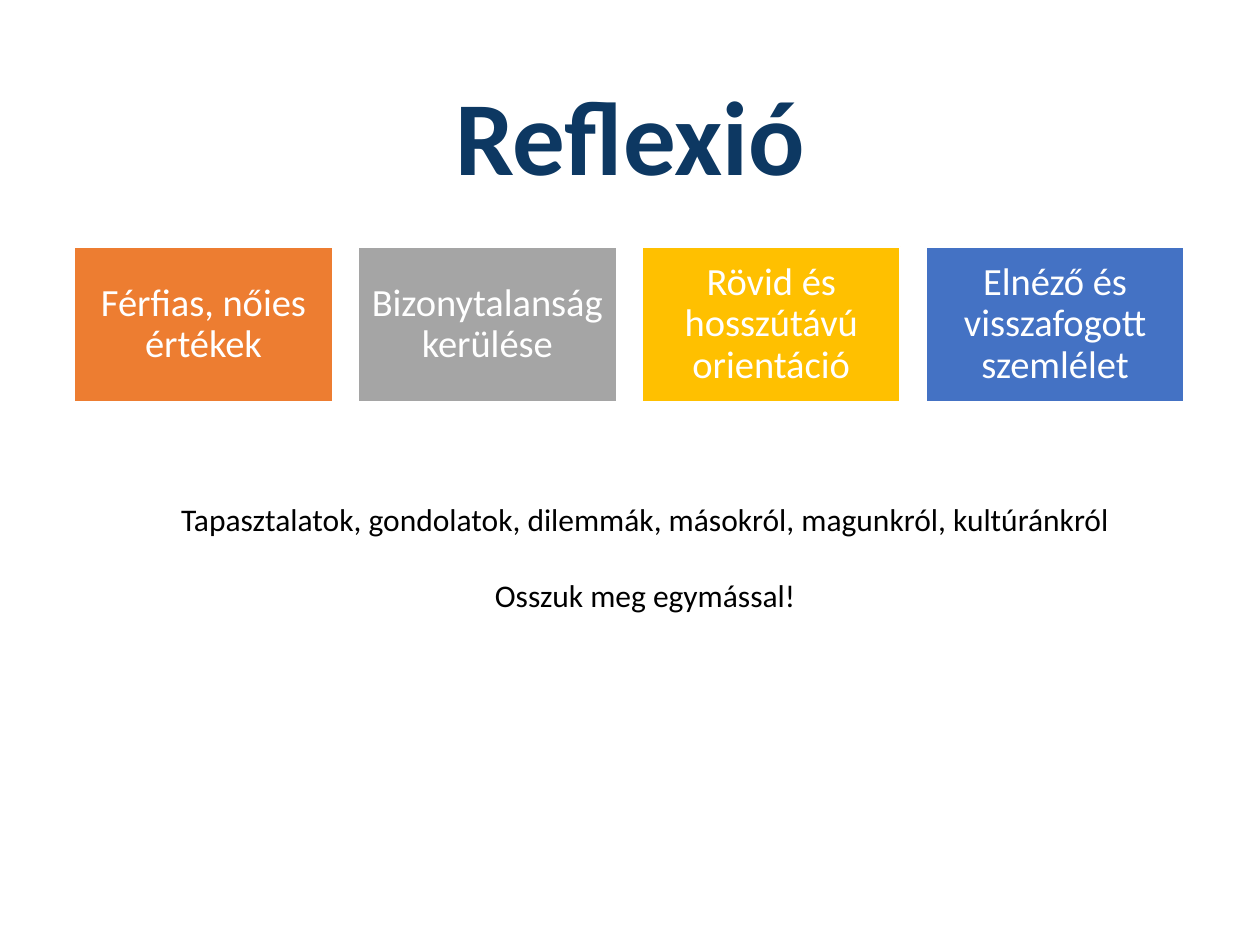
from dataclasses import dataclass

from pptx import Presentation
from pptx import util as u
from pptx.dml.color import RGBColor
from pptx.enum import shapes, text

FONT = "Calibri"
NAVY = RGBColor(0x0D, 0x38, 0x62)
ORANGE = RGBColor(0xED, 0x7D, 0x31)
GRAY = RGBColor(0xA5, 0xA5, 0xA5)
GOLD = RGBColor(0xFF, 0xC0, 0x00)
BLUE = RGBColor(0x44, 0x72, 0xC4)
WHITE = RGBColor(0xFF, 0xFF, 0xFF)
BLACK = RGBColor(0x00, 0x00, 0x00)

CARD_LEFT, CARD_TOP = 0.59, 1.96
CARD_WIDTH, CARD_HEIGHT = 2.05, 1.23
CARD_STEP = 2.253
CARD_INSET = u.Inches(0.09)


@dataclass
class Card:
    label: str
    fill: RGBColor


CARDS = [
    Card("Férfias, nőies értékek", ORANGE),
    Card("Bizonytalanság kerülése", GRAY),
    Card("Rövid és hosszútávú orientáció", GOLD),
    Card("Elnéző és visszafogott szemlélet", BLUE),
]
PROMPTS = [
    "Tapasztalatok, gondolatok, dilemmák, másokról, magunkról, kultúránkról",
    "Osszuk meg egymással!",
]


def add_run(p, words: str, size: int, color: RGBColor, bold: bool = False) -> None:
    """Centre the paragraph and add one formatted run."""
    p.alignment = text.PP_ALIGN.CENTER
    r = p.add_run()
    r.text = words
    r.font.name = FONT
    r.font.size = u.Pt(size)
    r.font.bold = bold
    r.font.color.rgb = color


def add_card(slide, card: Card, index: int) -> None:
    sp = slide.shapes.add_shape(
        shapes.MSO_SHAPE.RECTANGLE,
        u.Inches(CARD_LEFT + index * CARD_STEP), u.Inches(CARD_TOP),
        u.Inches(CARD_WIDTH), u.Inches(CARD_HEIGHT))
    sp.shadow.inherit = False
    sp.fill.solid()
    sp.fill.fore_color.rgb = card.fill
    sp.line.color.rgb = WHITE
    sp.line.width = u.Pt(1)
    tf = sp.text_frame
    tf.word_wrap = True
    tf.vertical_anchor = text.MSO_ANCHOR.MIDDLE
    tf.margin_left = tf.margin_right = CARD_INSET
    tf.margin_top = tf.margin_bottom = CARD_INSET
    p = tf.paragraphs[0]
    p.line_spacing = 0.9
    add_run(p, card.label, 22, WHITE)


def main() -> None:
    prs = Presentation()
    prs.slide_width, prs.slide_height = u.Inches(10), u.Inches(7.5)
    slide = prs.slides.add_slide(prs.slide_layouts[5])

    # Title
    title = slide.shapes.title
    title.left, title.top = u.Inches(0.69), u.Inches(0.4)
    title.width, title.height = u.Inches(8.62), u.Inches(1.45)
    title.text_frame.vertical_anchor = text.MSO_ANCHOR.MIDDLE
    p = title.text_frame.paragraphs[0]
    p.line_spacing = 0.9
    add_run(p, "Reflexió", 60, NAVY, bold=True)

    # Row of topic cards
    for index, card in enumerate(CARDS):
        add_card(slide, card, index)

    # Discussion prompts
    box = slide.shapes.add_textbox(
        u.Inches(0.76), u.Inches(3.92), u.Inches(8.72), u.Inches(1.01))
    tf = box.text_frame
    tf.word_wrap = True
    tf.auto_size = text.MSO_AUTO_SIZE.SHAPE_TO_FIT_TEXT
    for index, prompt in enumerate(PROMPTS):
        p = tf.add_paragraph() if index else tf.paragraphs[0]
        if index:
            p.space_before = u.Pt(22)
        add_run(p, prompt, 18, BLACK)

    prs.save("out.pptx")


if __name__ == "__main__":
    main()
